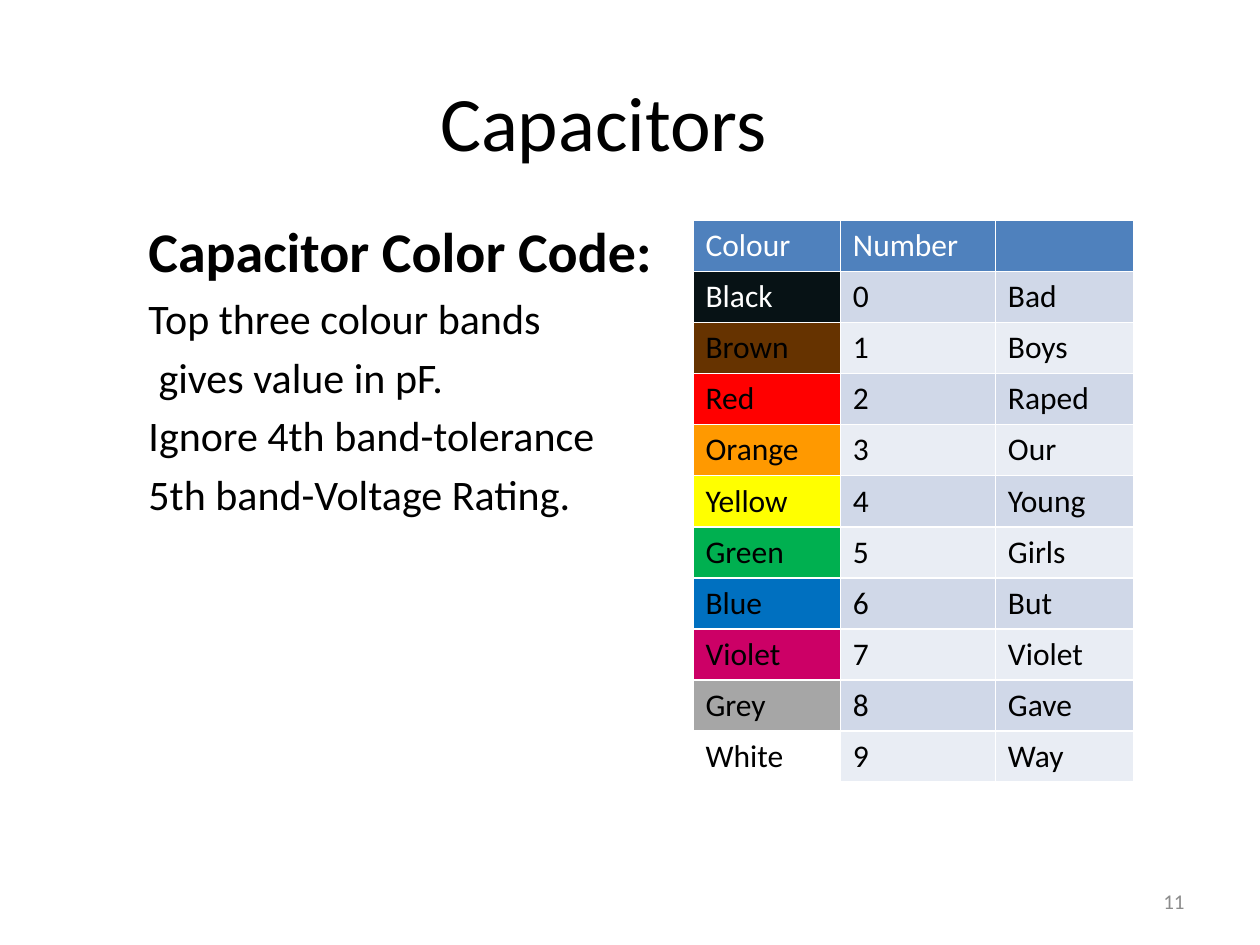
from pptx import Presentation
from pptx.dml.color import RGBColor
from pptx.enum.text import MSO_ANCHOR, PP_ALIGN
from pptx.util import Inches, Pt

LEFT, CENTER, RIGHT = PP_ALIGN.LEFT, PP_ALIGN.CENTER, PP_ALIGN.RIGHT
TOP, MIDDLE = MSO_ANCHOR.TOP, MSO_ANCHOR.MIDDLE

BLACK = RGBColor(0x00, 0x00, 0x00)
WHITE = RGBColor(0xFF, 0xFF, 0xFF)
PAGE_GREY = RGBColor(0x8C, 0x8C, 0x8C)
HEADER_BLUE = RGBColor(0x4F, 0x81, 0xBD)
BAND_DARK = RGBColor(0xD0, 0xD8, 0xE8)
BAND_LIGHT = RGBColor(0xE9, 0xED, 0xF4)
CODE_BLACK = RGBColor(0x07, 0x12, 0x15)
CODE_BROWN = RGBColor(0x66, 0x33, 0x00)
CODE_RED = RGBColor(0xFF, 0x00, 0x00)
CODE_ORANGE = RGBColor(0xFF, 0x99, 0x00)
CODE_YELLOW = RGBColor(0xFF, 0xFF, 0x00)
CODE_GREEN = RGBColor(0x00, 0xB0, 0x50)
CODE_BLUE = RGBColor(0x00, 0x70, 0xC0)
CODE_VIOLET = RGBColor(0xCC, 0x00, 0x66)
CODE_GREY = RGBColor(0xA6, 0xA6, 0xA6)


def write(paragraph, text, size=18, color=BLACK, bold=False, align=LEFT,
          space_before=0, indent=0):
    paragraph.alignment = align
    paragraph.space_before = Pt(space_before)
    if indent:
        paragraph._p.get_or_add_pPr().set("marL", str(Inches(indent)))
    run = paragraph.add_run()
    run.text = text
    run.font.name = "Calibri"
    run.font.size = Pt(size)
    run.font.bold = bold
    run.font.color.rgb = color


def add_text_frame(slide, left, top, width, height, anchor=TOP):
    box = slide.shapes.add_textbox(Inches(left), Inches(top), Inches(width), Inches(height))
    box.text_frame.word_wrap = True
    box.text_frame.vertical_anchor = anchor
    return box.text_frame


presentation = Presentation()
presentation.slide_width = Inches(10)
presentation.slide_height = Inches(7.5)
slide = presentation.slides.add_slide(presentation.slide_layouts[6])

# Title
title = add_text_frame(slide, 0.83, 0.5, 7.92, 0.92, MIDDLE)
write(title.paragraphs[0], "Capacitors", size=44, align=CENTER)

# Explanation of the bands
body = add_text_frame(slide, 1.08, 1.67, 7.75, 4.92)
write(body.paragraphs[0], "Capacitor Color Code:", size=32, bold=True)
body_lines = [
    ("Top three colour bands", 0),
    ("gives value in pF.", 0.08),
    ("Ignore 4th band-tolerance", 0),
    ("5th band-Voltage Rating.", 0),
]
for text, indent in body_lines:
    write(body.add_paragraph(), text, size=24, space_before=4.8, indent=indent)

# Colour code table
headers = ["Colour", "Number", ""]
color_codes = [
    ("Black", CODE_BLACK, "Bad"),
    ("Brown", CODE_BROWN, "Boys"),
    ("Red", CODE_RED, "Raped"),
    ("Orange", CODE_ORANGE, "Our"),
    ("Yellow", CODE_YELLOW, "Young"),
    ("Green", CODE_GREEN, "Girls"),
    ("Blue", CODE_BLUE, "But"),
    ("Violet", CODE_VIOLET, "Violet"),
    ("Grey", CODE_GREY, "Gave"),
    ("White", WHITE, "Way"),
]
rows = [[(text, HEADER_BLUE, WHITE) for text in headers]]
for number, (name, fill, word) in enumerate(color_codes):
    band = BAND_LIGHT if number % 2 else BAND_DARK
    name_color = WHITE if fill == CODE_BLACK else BLACK
    rows.append([(name, fill, name_color), (str(number), band, BLACK), (word, band, BLACK)])

table = slide.shapes.add_table(len(rows), len(headers), Inches(5.5), Inches(1.75),
                               Inches(3.5), Inches(4.46)).table
for column, width in zip(table.columns, [1.17, 1.23, 1.1]):
    column.width = Inches(width)
for row_index, row in enumerate(rows):
    for column_index, (text, fill, color) in enumerate(row):
        cell = table.cell(row_index, column_index)
        cell.fill.solid()
        cell.fill.fore_color.rgb = fill
        if text:
            write(cell.text_frame.paragraphs[0], text, color=color)

# Slide number
page = add_text_frame(slide, 7.17, 6.95, 2.33, 0.4, MIDDLE)
write(page.paragraphs[0], "11", size=12, color=PAGE_GREY, align=RIGHT)

presentation.save("out.pptx")
